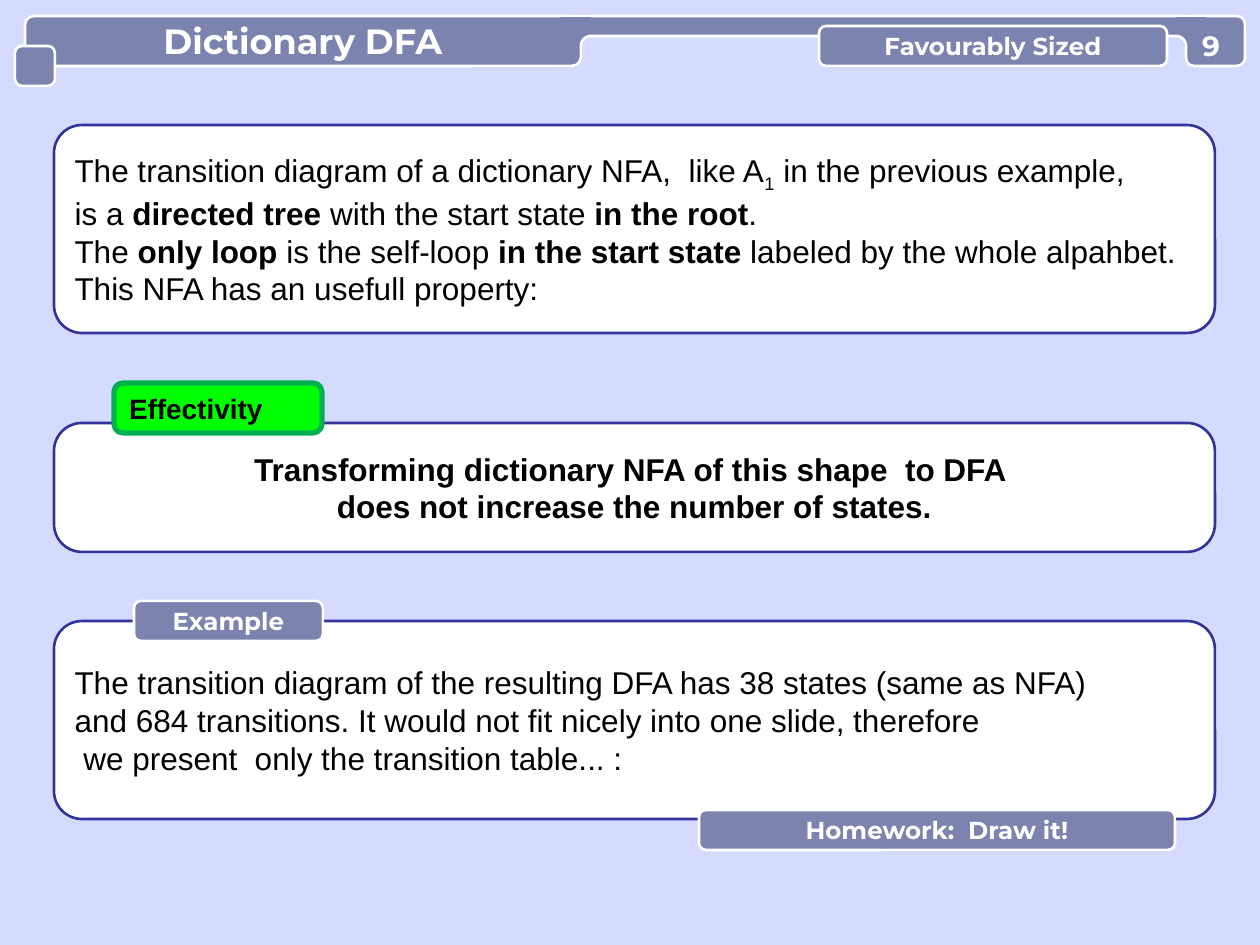
import math

from lxml import etree
from pptx import Presentation
from pptx.dml.color import RGBColor
from pptx.enum.shapes import MSO_CONNECTOR, MSO_SHAPE
from pptx.enum.text import MSO_ANCHOR, PP_ALIGN
from pptx.oxml.ns import qn
from pptx.util import Pt

EMU_PER_PX = 914400 / 126

LAVENDER = RGBColor(0xD5, 0xDA, 0xFF)
SLATE = RGBColor(0x7D, 0x83, 0xAF)
NAVY = RGBColor(0x33, 0x33, 0x99)
LIME = RGBColor(0x00, 0xFF, 0x00)
GREEN = RGBColor(0x00, 0xB0, 0x50)
WHITE = RGBColor(0xFF, 0xFF, 0xFF)
BLACK = RGBColor(0x00, 0x00, 0x00)

BODY_FONT, HEADING_FONT = "Arial", "Montserrat"
ROUNDED, SQUARE = MSO_SHAPE.ROUNDED_RECTANGLE, MSO_SHAPE.RECTANGLE
LEFT, CENTER = PP_ALIGN.LEFT, PP_ALIGN.CENTER
MIDDLE = MSO_ANCHOR.MIDDLE
STRAIGHT = MSO_CONNECTOR.STRAIGHT

BOLD, SUBSCRIPT = "bold", "subscript"

INTRODUCTION = [
    [("The transition diagram of a dictionary NFA,  like A", None), ("1", SUBSCRIPT),
     (" in the previous example,", None)],
    [("is a", None), (" directed tree", BOLD), (" with the start state", None),
     (" in the root", BOLD), (".", None)],
    [("The ", None), ("only loop", BOLD), (" is the self-loop ", None),
     ("in the start state", BOLD), (" labeled by the whole alpahbet.", None)],
    [("This NFA has an usefull property:", None)],
]
EFFECTIVITY = [
    [("Transforming dictionary NFA of this shape  to DFA ", BOLD)],
    [("does not increase the number of states.", BOLD)],
]
EXAMPLE = [
    [("The transition diagram of the resulting DFA has 38 states (same as NFA)", None)],
    [("and 684 transitions. It would not fit nicely into one slide, therefore", None)],
    [(" we present  only the transition table... :", None)],
]


def px(*lengths):
    return [round(length * EMU_PER_PX) for length in lengths]


def paint(shape, fill, line, width=1.5):
    shape.shadow.inherit = False
    if fill is None:
        shape.fill.background()
    else:
        shape.fill.solid()
        shape.fill.fore_color.rgb = fill
    if line is None:
        shape.line.fill.background()
    else:
        shape.line.color.rgb = line
        shape.line.width = Pt(width)


def write(shape, lines, size, font, color, align):
    """Fill a shape with lines, each a list of (text, style) runs."""
    frame = shape.text_frame
    frame.word_wrap = False
    frame.vertical_anchor = MIDDLE
    for index, line in enumerate(lines):
        paragraph = frame.add_paragraph() if index else frame.paragraphs[0]
        paragraph.alignment = align
        for text, style in line:
            run = paragraph.add_run()
            run.text = text
            run.font.size = Pt(size)
            run.font.name = font
            run.font.color.rgb = color
            run.font.bold = style == BOLD
            if style == SUBSCRIPT:
                run.font._element.set("baseline", "-25000")


def rounded_box(slide, box, radius, fill=SLATE, line=WHITE, width=1.5):
    shape = slide.shapes.add_shape(ROUNDED, *px(*box))
    shape.adjustments[0] = radius / min(box[2:])
    paint(shape, fill, line, width)
    return shape


def panel(slide, box, lines, align=LEFT):
    shape = rounded_box(slide, box, 28, WHITE, NAVY)
    write(shape, lines, 18, BODY_FONT, BLACK, align)


def tag(slide, box, text, size=14, radius=7):
    shape = rounded_box(slide, box, radius)
    write(shape, [[(text, BOLD)]], size, HEADING_FONT, WHITE, CENTER)


def green_tag(slide, box, text):
    shape = rounded_box(slide, box, 9, LIME, GREEN, 3)
    write(shape, [[(text, BOLD)]], 16, BODY_FONT, BLACK, LEFT)


def outline(slide, points, closed):
    builder = slide.shapes.build_freeform(*points[0])
    builder.add_line_segments(points[1:], close=closed)
    return builder.convert_to_shape()


def bar_joint(slide, left, top, side):
    """Blend the thin bar into a tab lying on the given side (-1 left, 1 right)."""
    size, radius, steps = 30, 10, 12
    patch = slide.shapes.add_shape(SQUARE, *px(left, top, size, size))
    paint(patch, SLATE, None)

    edge = slide.shapes.add_connector(STRAIGHT, *px(left, top, left + size, top))
    edge.line.color.rgb = WHITE
    edge.line.width = Pt(1.5)
    etree.SubElement(edge._element.spPr, qn("a:effectLst"))

    center_x = left + (size if side < 0 else 0)
    center_y = top + size
    angles = [math.pi / 2 * step / steps for step in range(steps + 1)]
    arc = [px(center_x + side * radius * math.sin(angle),
              center_y - radius * math.cos(angle)) for angle in angles]
    paint(outline(slide, arc + [px(center_x, center_y)], True), LAVENDER, None)
    paint(outline(slide, arc, False), None, WHITE)


def header(slide, left, top, title, topic, number):
    tag(slide, (left + 10, top, 556, 50), title, 20, 9)
    rounded_box(slide, (left + 566, top, 615, 20), 10)
    bar_joint(slide, left + 546, top, -1)
    rounded_box(slide, (left, top + 30, 40, 40), 7)
    rounded_box(slide, (left + 1171, top, 59, 50), 8)
    bar_joint(slide, left + 1161, top, 1)
    tag(slide, (left + 804, top + 10, 348, 40), topic)

    page = slide.shapes.add_textbox(*px(left + 1171, top + 12, 50, 34))
    frame = page.text_frame
    frame.margin_left = frame.margin_right = frame.margin_top = frame.margin_bottom = 0
    write(page, [[(number, BOLD)]], 16, HEADING_FONT, WHITE, CENTER)


def main():
    presentation = Presentation()
    presentation.slide_width, presentation.slide_height = px(1260, 945)
    slide = presentation.slides.add_slide(presentation.slide_layouts[6])
    slide.background.fill.solid()
    slide.background.fill.fore_color.rgb = LAVENDER

    left, width = 54, 1161
    header(slide, 15, 16, "Dictionary DFA", "Favourably Sized", "9")
    panel(slide, (left, 125, width, 208), INTRODUCTION)
    panel(slide, (left, 423, width, 129), EFFECTIVITY, CENTER)
    green_tag(slide, (left + 60, 383, 208, 50), "Effectivity")
    panel(slide, (left, 621, width, 198), EXAMPLE)
    tag(slide, (left + 80, 601, 189, 40), "Example")
    tag(slide, (left + 645, 810, 476, 40), "Homework:  Draw it!")

    presentation.save("out.pptx")


if __name__ == "__main__":
    main()
